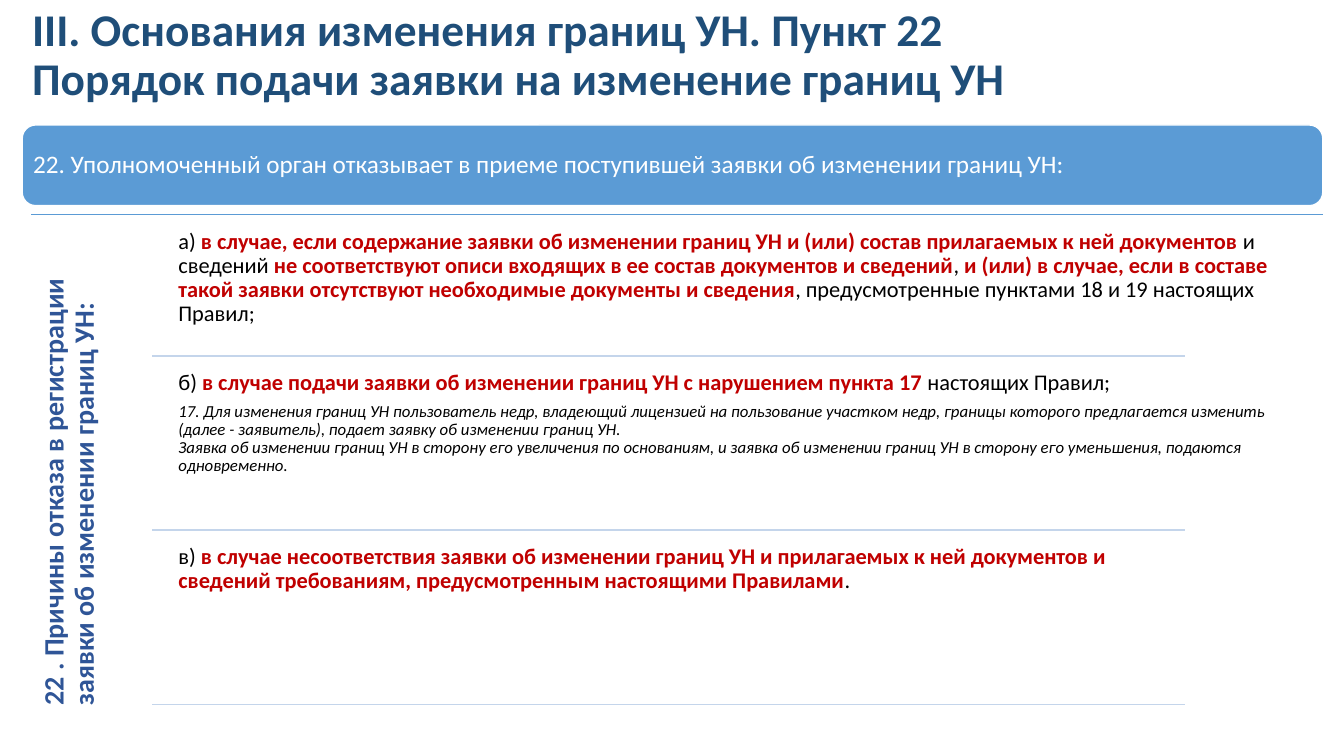
from dataclasses import dataclass

from lxml import etree
from pptx import Presentation
from pptx import util as u
from pptx.dml.color import RGBColor
from pptx.enum import shapes, text

SLIDE_W, SLIDE_H = 13.33, 7.5


@dataclass(frozen=True)
class Theme:
    font: str = "Calibri"
    title: str = "1F4E79"
    accent: str = "5B9BD5"
    side: str = "2F5597"
    divider: str = "C4D5EB"
    body: str = "000000"
    key: str = "C00000"
    white: str = "FFFFFF"
    title_size: float = 32.4
    side_size: float = 20
    banner_size: float = 18
    body_size: float = 16
    note_size: float = 12


THEME = Theme()

TITLE = "III. Основания изменения границ УН. Пункт 22\nПорядок подачи заявки на изменение границ УН"
BANNER = "22. Уполномоченный орган отказывает в приеме поступившей заявки об изменении границ УН:"
SIDE = "22 . Причины отказа в регистрации заявки об изменении границ УН:"

# Each reason alternates plain and highlighted wording, starting with plain
REASON_A = [
    "а) ",
    "в случае, если содержание заявки об изменении границ УН и (или) состав прилагаемых к ней документов ",
    "и сведений ",
    "не соответствуют описи входящих в ее состав документов и сведений",
    ", ",
    "и (или) в случае, если в составе такой заявки отсутствуют необходимые документы и сведения",
    ", предусмотренные пунктами 18 и 19 настоящих Правил;",
]
REASON_B = [
    "б) ",
    "в случае подачи заявки об изменении границ УН с нарушением пункта 17",
    " настоящих Правил;",
]
NOTE_B = (
    "17. Для изменения границ УН пользователь недр, владеющий лицензией на пользование "
    "участком недр, границы которого предлагается изменить (далее - заявитель), "
    "подает заявку об изменении границ УН.\n"
    "Заявка об изменении границ УН в сторону его увеличения по основаниям, и заявка "
    "об изменении границ УН в сторону его уменьшения, подаются одновременно."
)
REASON_C = [
    "в) ",
    "в случае несоответствия заявки об изменении границ УН и прилагаемых к ней документов "
    "и сведений требованиям, предусмотренным настоящими Правилами",
    ".",
]

# Reason, note, text width in percent of the slide
REASONS = [(REASON_A, None, 84.25), (REASON_B, NOTE_B, 85.15), (REASON_C, None, 75.4)]

# Vertical grid of the reasons, in percent of the slide height
ROW_EDGES = [28.4, 47.07, 70.13, 93.2]
ROW_GAP = 1.07


def x(percent):
    return u.Inches(SLIDE_W * percent / 100)


def y(percent):
    return u.Inches(SLIDE_H * percent / 100)


def style_run(run, size, color, bold=False, italic=False):
    run.font.name = THEME.font
    run.font.size = u.Pt(size)
    run.font.bold = bold
    run.font.italic = italic
    run.font.color.rgb = RGBColor.from_string(color)


def write(paragraph, wording, size, color, bold=False, italic=False):
    paragraph.text = wording.replace("\n", "\v")
    set_spacing(paragraph, size)
    for run in paragraph.runs:
        style_run(run, size, color, bold, italic)


def write_reason(paragraph, pieces):
    set_spacing(paragraph, THEME.body_size)
    for index, piece in enumerate(pieces):
        highlighted = index % 2 == 1
        run = paragraph.add_run()
        run.text = piece
        style_run(run, THEME.body_size, THEME.key if highlighted else THEME.body, highlighted)


def set_spacing(paragraph, size):
    paragraph.alignment = text.PP_ALIGN.LEFT
    paragraph.line_spacing = 0.9
    paragraph.space_after = u.Pt(round(size * 0.35, 1))


def set_insets(frame, left, top, right, bottom):
    frame.word_wrap = True
    frame.margin_left, frame.margin_top = u.Inches(left), u.Inches(top)
    frame.margin_right, frame.margin_bottom = u.Inches(right), u.Inches(bottom)


def add_frame(slide, left, top, width, height, insets):
    frame = slide.shapes.add_textbox(x(left), y(top), x(width), y(height)).text_frame
    frame.vertical_anchor = text.MSO_ANCHOR.TOP
    set_insets(frame, *insets)
    return frame


def add_rule(slide, left, right, level, color):
    rule = slide.shapes.add_connector(
        shapes.MSO_CONNECTOR.STRAIGHT, x(left), y(level), x(right), y(level))
    rule.line.color.rgb = RGBColor.from_string(color)
    rule.line.width = u.Pt(1)
    etree.SubElement(
        rule._element.spPr, "{http://schemas.openxmlformats.org/drawingml/2006/main}effectLst")


def add_banner(slide):
    banner = slide.shapes.add_shape(
        shapes.MSO_SHAPE.ROUNDED_RECTANGLE, x(1.65), y(16.53), x(96.77), y(10.67))
    banner.shadow.inherit = False
    banner.fill.solid()
    banner.fill.fore_color.rgb = RGBColor.from_string(THEME.accent)
    banner.line.color.rgb = RGBColor.from_string(THEME.white)
    banner.line.width = u.Pt(1)
    frame = banner.text_frame
    frame.vertical_anchor = text.MSO_ANCHOR.MIDDLE
    set_insets(frame, 0.07, 0.07, 0.07, 0.07)
    write(frame.paragraphs[0], BANNER, THEME.banner_size, THEME.white)


def add_side_heading(slide):
    frame = add_frame(slide, 2.33, ROW_EDGES[0], 9, 66, [0.08] * 4)
    frame._txBody.bodyPr.set("vert", "vert270")
    write(frame.paragraphs[0], SIDE, THEME.side_size, THEME.side, bold=True)


def add_reason(slide, top, bottom, pieces, note, width):
    frame = add_frame(slide, 12.75, top + ROW_GAP, width, bottom - top - ROW_GAP, [0.07] * 4)
    write_reason(frame.paragraphs[0], pieces)
    if note:
        write(frame.add_paragraph(), note, THEME.note_size, THEME.body, italic=True)
    add_rule(slide, 11.33, 88.15, bottom, THEME.divider)


def main():
    deck = Presentation()
    deck.slide_width, deck.slide_height = u.Inches(SLIDE_W), u.Inches(SLIDE_H)
    slide = deck.slides.add_slide(deck.slide_layouts[6])

    # Title
    title = add_frame(slide, 1.65, 0.93, 94.75, 14.6, [0.1, 0, 0.1, 0])
    write(title.paragraphs[0], TITLE, THEME.title_size, THEME.title, bold=True)

    # Banner with the rule under it
    add_banner(slide)
    add_rule(slide, 2.33, 98.42, ROW_EDGES[0], THEME.accent)

    # Reasons for refusal
    add_side_heading(slide)
    for top, bottom, reason in zip(ROW_EDGES, ROW_EDGES[1:], REASONS):
        add_reason(slide, top, bottom, *reason)

    deck.save("out.pptx")


if __name__ == "__main__":
    main()
